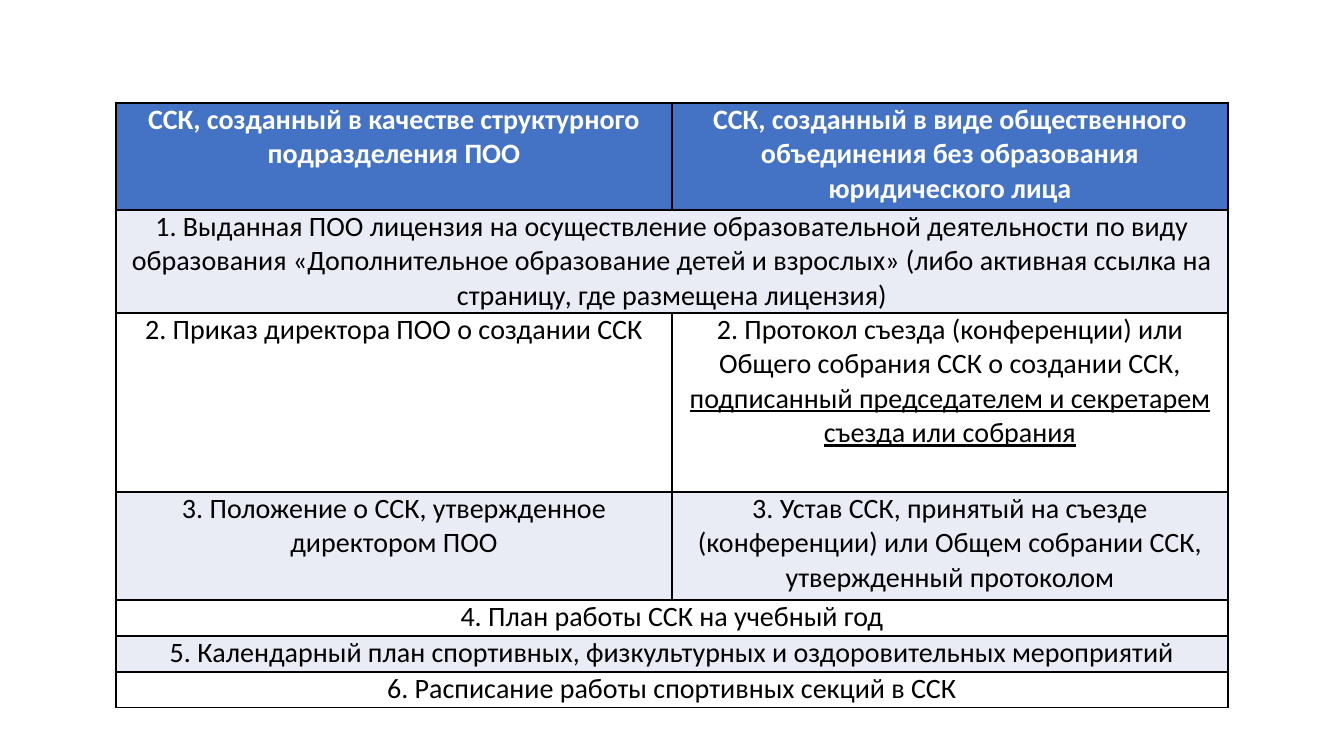
"""Build a slide with a table of the documents needed by a sports club."""
from lxml import etree
from pptx import Presentation
from pptx import util as u
from pptx.dml.color import RGBColor
from pptx.enum import text
from pptx.oxml import ns

SCALE = 914400 / 100.8
LEFT, TOP, COLUMN_WIDTH = 116, 103, 556
HEADER_FILL, BAND_FILL, PLAIN_FILL = "4472C4", "E9EBF5", "FFFFFF"
CELL_FORMAT = {
    "margin_left": 7, "margin_right": 7, "margin_top": 0, "margin_bottom": 0,
}
FONT_FORMAT = {"name": "Calibri", "size": u.Pt(20)}

ROWS = [
    (107, [["ССК, созданный в качестве структурного подразделения ПОО"],
           ["ССК, созданный в виде общественного объединения без образования "
            "юридического лица"]]),
    (103, [["1. Выданная ПОО лицензия на осуществление образовательной "
            "деятельности по виду образования «Дополнительное образование детей "
            "и взрослых» (либо активная ссылка на страницу, где размещена "
            "лицензия)"]]),
    (179, [["2. Приказ директора ПОО о создании ССК"],
           ["2. Протокол съезда (конференции) или Общего собрания ССК о "
            "создании ССК, ",
            "подписанный председателем и секретарем съезда или собрания"]]),
    (108, [["3. Положение о ССК, утвержденное директором ПОО"],
           ["3. Устав ССК, принятый на съезде (конференции) или Общем собрании "
            "ССК, утвержденный протоколом"]]),
    (36, [["4. План работы ССК на учебный год"]]),
    (36, [["5. Календарный план спортивных, физкультурных и оздоровительных "
           "мероприятий"]]),
    (36, [["6. Расписание работы спортивных секций в ССК"]]),
]


def px(length):
    """Turn pixels into EMU."""
    return u.Emu(round(length * SCALE))


def color(value):
    """Turn a hex string into a colour."""
    return RGBColor.from_string(value)


def apply_format(target, values):
    """Set each named attribute of the target."""
    for name, value in values.items():
        setattr(target, name, value)


def add_borders(cell, line_color="000000", width=1):
    """Draw a solid line on all four sides of a cell."""
    properties = cell._tc.get_or_add_tcPr()
    for side in ("lnL", "lnR", "lnT", "lnB"):
        line = etree.SubElement(properties, ns.qn(f"a:{side}"), w=str(u.Pt(width)))
        fill = etree.SubElement(line, ns.qn("a:solidFill"))
        etree.SubElement(fill, ns.qn("a:srgbClr"), val=line_color)


def style_cell(cell, fill_color):
    """Give a cell its margins, borders and fill."""
    apply_format(cell, {name: px(value) for name, value in CELL_FORMAT.items()})
    add_borders(cell)
    cell.fill.solid()
    cell.fill.fore_color.rgb = color(fill_color)


def write_cell(cell, parts, is_header):
    """Write centred text, with any part after the first underlined."""
    paragraph = cell.text_frame.paragraphs[0]
    paragraph.alignment = text.PP_ALIGN.CENTER
    for index, part in enumerate(parts):
        run = paragraph.add_run()
        run.text = part
        apply_format(run.font, {**FONT_FORMAT, "bold": is_header,
                                "underline": index > 0})
        run.font.color.rgb = color("FFFFFF" if is_header else "000000")


def add_document_table(slide):
    """Add the table, merging rows that hold a single entry."""
    height = sum(row_height for row_height, _ in ROWS)
    table = slide.shapes.add_table(len(ROWS), 2, px(LEFT), px(TOP),
                                   px(2 * COLUMN_WIDTH), px(height)).table
    for column in table.columns:
        column.width = px(COLUMN_WIDTH)
    for index, (row_height, entries) in enumerate(ROWS):
        row = table.rows[index]
        row.height = px(row_height)
        is_header = index == 0
        band = BAND_FILL if index % 2 else PLAIN_FILL
        for cell in row.cells:
            style_cell(cell, HEADER_FILL if is_header else band)
        if len(entries) == 1:
            table.cell(index, 0).merge(table.cell(index, 1))
        for column_index, parts in enumerate(entries):
            write_cell(table.cell(index, column_index), parts, is_header)


def main():
    """Create and save the presentation."""
    presentation = Presentation()
    apply_format(presentation, {"slide_width": px(1344), "slide_height": px(756)})
    slide = presentation.slides.add_slide(presentation.slide_layouts[6])
    add_document_table(slide)
    presentation.save("out.pptx")


if __name__ == "__main__":
    main()
